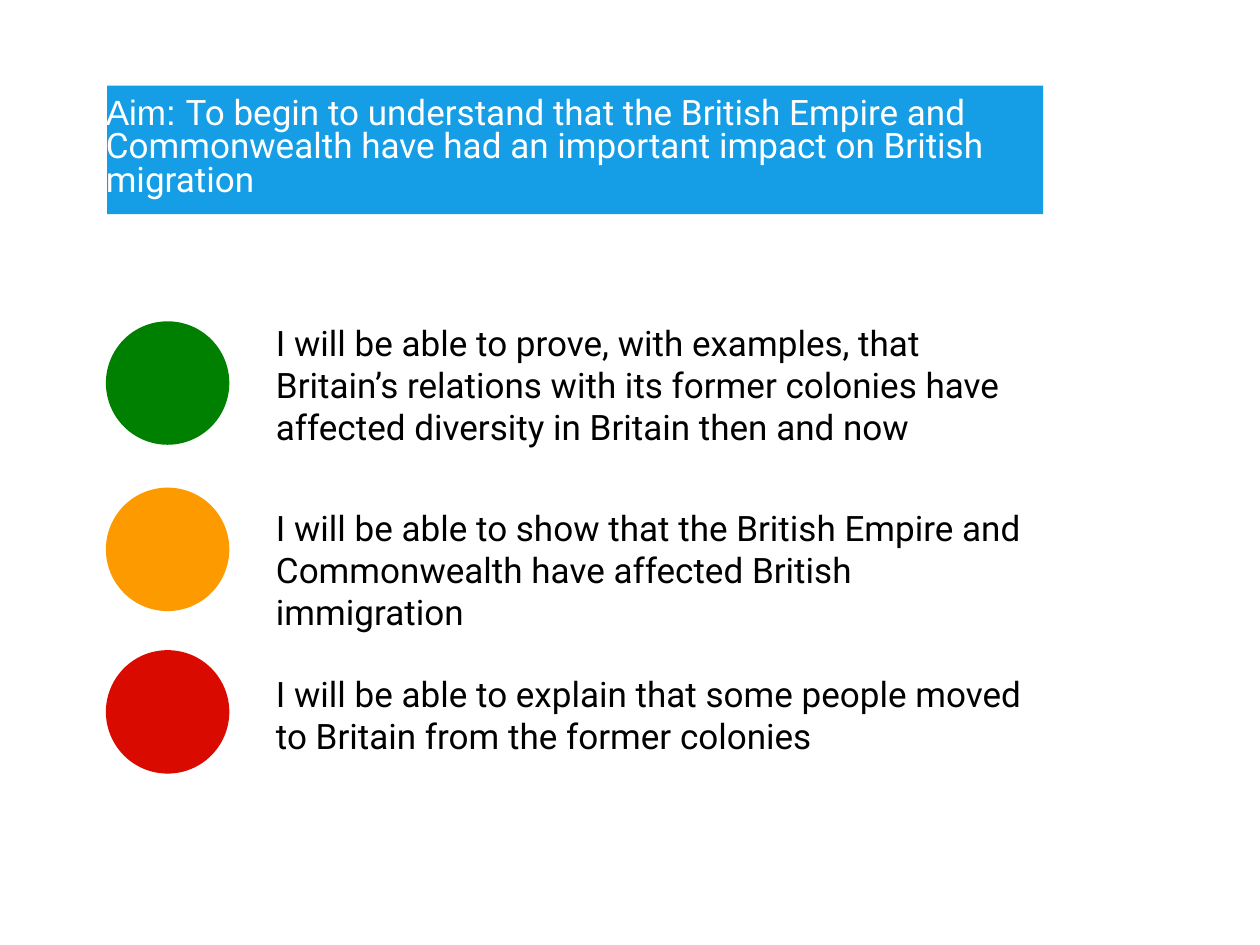
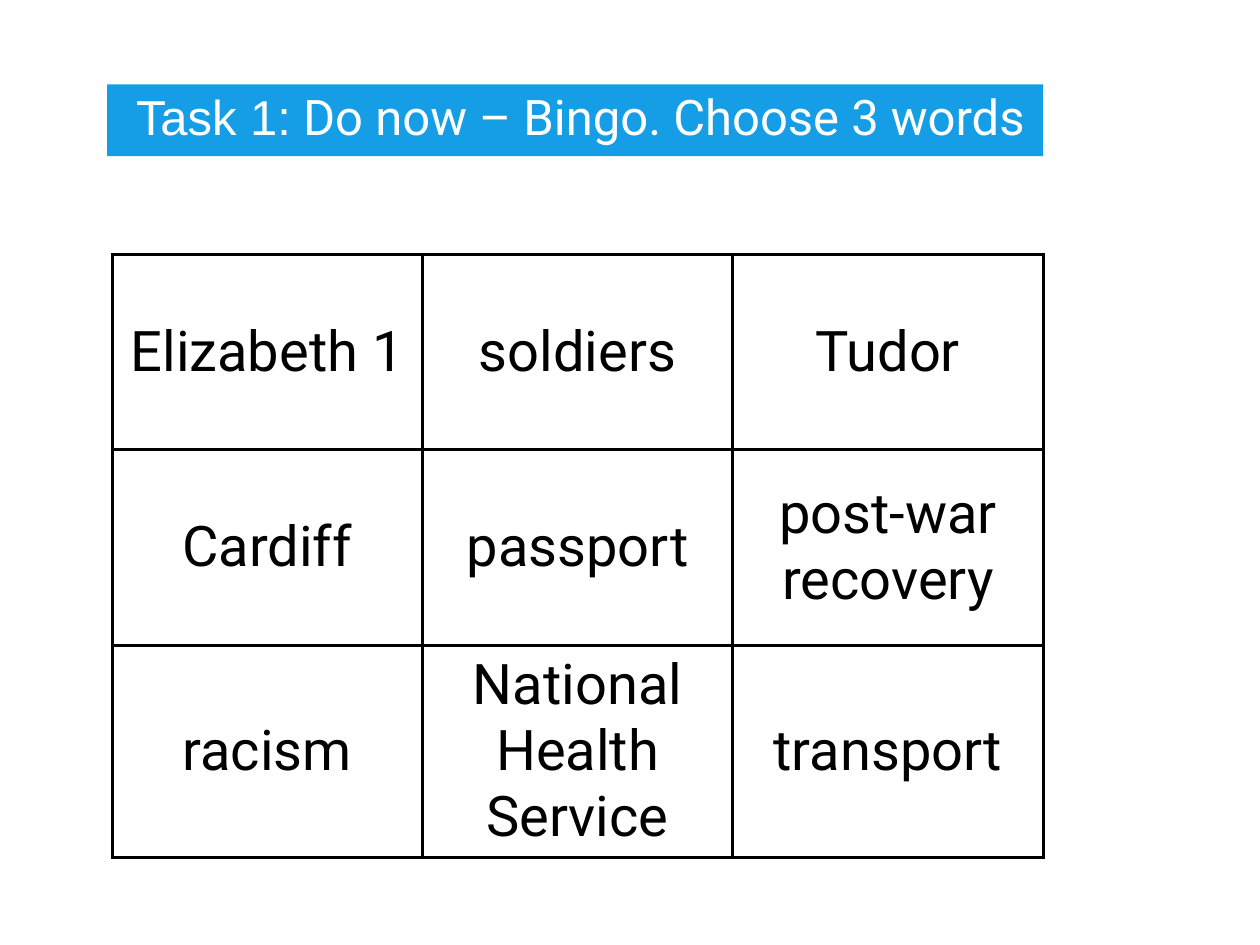
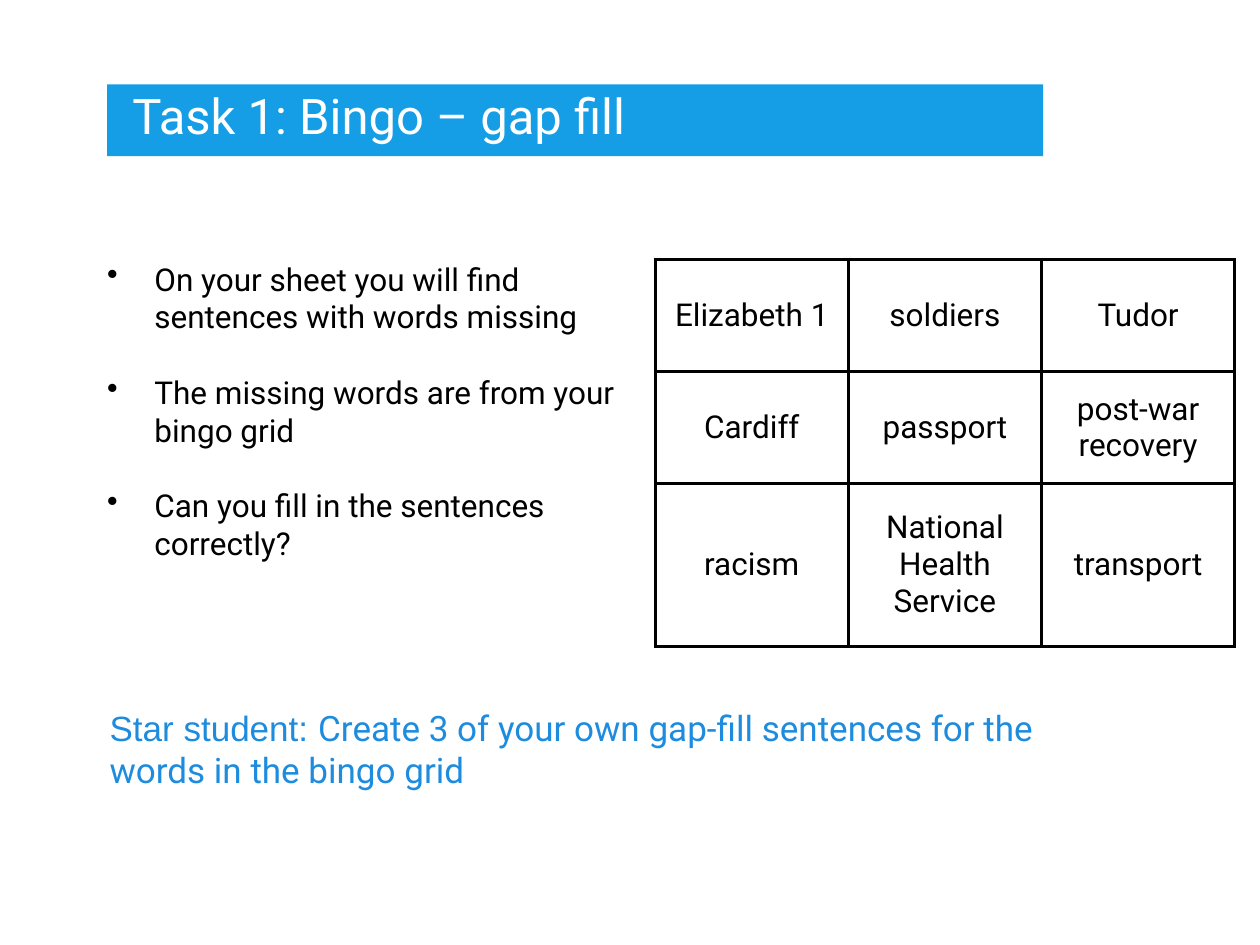
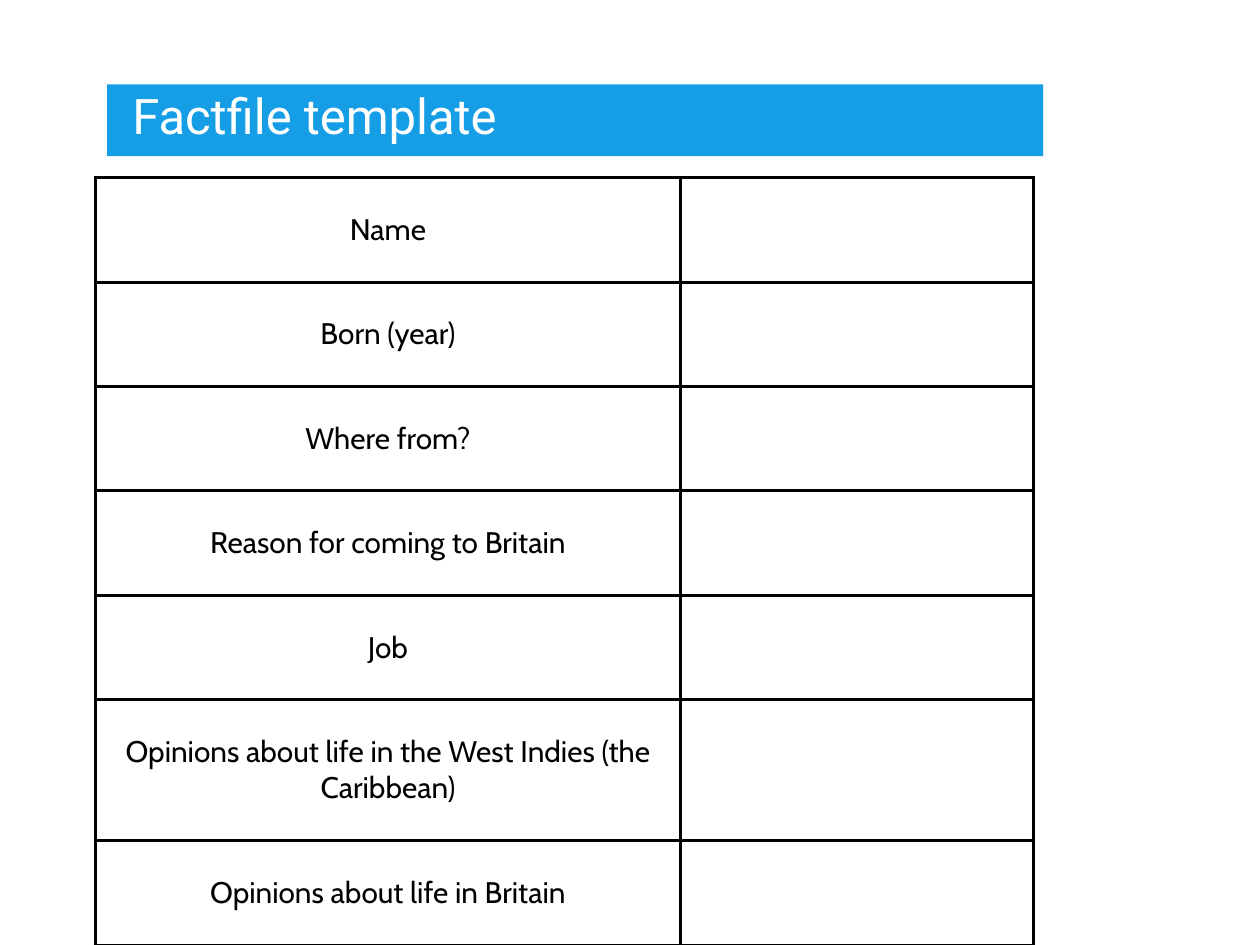
from dataclasses import dataclass
from typing import NamedTuple

from lxml.etree import SubElement
from pptx import Presentation
from pptx.dml.color import RGBColor
from pptx.enum.shapes import MSO_SHAPE as Preset
from pptx.enum.text import MSO_ANCHOR as Anchor, MSO_AUTO_SIZE as AutoSize, PP_ALIGN as Align
from pptx.oxml.ns import qn
from pptx.util import Pt


@dataclass(frozen=True)
class Theme:
    band: str = "159EE5"
    accent: str = "1E8CDE"
    ink: str = "000000"
    paper: str = "FFFFFF"
    green: str = "008000"
    amber: str = "FD9A00"
    red: str = "D90B00"
    body_font: str = "Roboto"
    label_font: str = "Arial"
    form_font: str = "Cabin"
    title_size: float = 28
    lead_size: float = 20
    bullet_size: float = 18
    bingo_size: float = 32
    form_size: float = 17
    border: float = 2
    cell_inset: float = 3


THEME = Theme()


class Box(NamedTuple):
    """Left, top, width and height in points."""
    left: float
    top: float
    width: float
    height: float

    def lengths(self) -> list:
        return [Pt(value) for value in self]


class Span(NamedTuple):
    text: str
    font: str = THEME.body_font


class Goal(NamedTuple):
    colour: str
    circle_top: float
    text_top: float
    text_height: float
    text: str


BAND = Box(61.2, 48.24, 534.96, 41.04)
AIM_BAND = BAND._replace(top=48.96, height=73.44)
TITLE = Box(75.6, 48.96, 519.84, 33.84)
CIRCLE_LEFT, CIRCLE_SIZE = 60.48, 70.56
GOAL_LEFT, GOAL_WIDTH = 157.68, 438.48

GOALS = [
    Goal(THEME.green, 183.6, 183.6, 95,
         "I will be able to prove, with examples, that Britain’s relations with "
         "its former colonies have affected diversity in Britain then and now"),
    Goal(THEME.amber, 278.64, 289.44, 61.2,
         "I will be able to show that the British Empire and Commonwealth have "
         "affected British immigration"),
    Goal(THEME.red, 371.52, 384.48, 92.16,
         "I will be able to explain that some people moved to Britain from the "
         "former colonies"),
]
BINGO = [
    ["Elizabeth 1", "soldiers", "Tudor"],
    ["Cardiff", "passport", "post-war recovery"],
    ["racism", "National Health Service", "transport"],
]
INSTRUCTIONS = [
    "On your sheet you will find sentences with words missing",
    "The missing words are from your bingo grid",
    "Can you fill in the sentences correctly?",
]
FACTS = [
    "Name",
    "Born (year)",
    "Where from?",
    "Reason for coming to Britain",
    "Job",
    "Opinions about life in the West Indies (the Caribbean)",
    "Opinions about life in Britain",
]


def add_filled(page, preset, box: Box, colour: str) -> None:
    shape = page.shapes.add_shape(preset, *box.lengths())
    shape.shadow.inherit = False
    shape.fill.solid()
    shape.fill.fore_color.rgb = RGBColor.from_string(colour)
    shape.line.fill.background()


def write(para, *spans: Span, size: float, colour: str = THEME.ink) -> None:
    for span in spans:
        run = para.add_run()
        run.text = span.text
        run.font.name = span.font
        run.font.size = Pt(size)
        run.font.color.rgb = RGBColor.from_string(colour)


def add_frame(page, box: Box, grow: bool = False):
    """Add a wrapping text box without margins and return its text frame."""
    frame = page.shapes.add_textbox(*box.lengths()).text_frame
    frame.word_wrap = True
    frame.auto_size = AutoSize.SHAPE_TO_FIT_TEXT if grow else AutoSize.NONE
    frame.margin_left = frame.margin_top = frame.margin_right = frame.margin_bottom = 0
    return frame


def add_title(page, *spans: Span, box: Box = TITLE, band: Box = BAND,
              size: float = THEME.title_size, spacing: float | None = None) -> None:
    add_filled(page, Preset.RECTANGLE, band, THEME.band)
    para = add_frame(page, box, grow=True).paragraphs[0]
    para.line_spacing = spacing
    write(para, *spans, size=size, colour=THEME.paper)


def add_bullets(page, box: Box, items: list[str], indent: float, gap: float) -> None:
    frame = add_frame(page, box)
    for index, item in enumerate(items):
        para = frame.add_paragraph() if index else frame.paragraphs[0]
        para.space_before = Pt(gap if index else 0)
        write(para, Span(item), size=THEME.bullet_size)
        props = para._p.get_or_add_pPr()
        props.set("marL", str(Pt(indent)))
        props.set("indent", str(-Pt(indent)))
        SubElement(props, qn("a:buChar"), char="•")


def draw_borders(cell) -> None:
    props = cell._tc.get_or_add_tcPr()
    for side in ("lnL", "lnR", "lnT", "lnB"):
        line = SubElement(props, qn(f"a:{side}"), w=str(Pt(THEME.border)))
        fill = SubElement(line, qn("a:solidFill"))
        SubElement(fill, qn("a:srgbClr"), val=THEME.ink)


def add_grid(page, left: float, top: float, rows: list[list[str]], widths: list[float],
             heights: list[float], size: float, font: str = THEME.body_font) -> None:
    """Add a ruled table with centred text and no cell fills."""
    box = Box(left, top, sum(widths), sum(heights))
    table = page.shapes.add_table(len(rows), len(widths), *box.lengths()).table
    table.first_row = table.horz_banding = False
    for column, width in zip(table.columns, widths):
        column.width = Pt(width)
    for row, height, texts in zip(table.rows, heights, rows):
        row.height = Pt(height)
        for cell, text in zip(row.cells, texts):
            draw_borders(cell)
            cell.fill.background()
            cell.vertical_anchor = Anchor.MIDDLE
            cell.margin_left = cell.margin_right = Pt(THEME.cell_inset)
            cell.margin_top = cell.margin_bottom = Pt(THEME.cell_inset)
            para = cell.text_frame.paragraphs[0]
            para.alignment = Align.CENTER
            if text:
                write(para, Span(text, font), size=size)


def build_aim(page) -> None:
    for goal in GOALS:
        circle = Box(CIRCLE_LEFT, goal.circle_top, CIRCLE_SIZE, CIRCLE_SIZE)
        add_filled(page, Preset.OVAL, circle, goal.colour)
    for goal in GOALS:
        frame = add_frame(page, Box(GOAL_LEFT, goal.text_top, GOAL_WIDTH, goal.text_height))
        write(frame.paragraphs[0], Span(goal.text), size=THEME.lead_size)
    add_title(page, Span("Aim: ", THEME.label_font),
              Span("To begin to understand that the British Empire and Commonwealth "
                   "have had an important impact on British migration"),
              box=Box(60.48, 56.16, 534.96, 59), band=AIM_BAND,
              size=THEME.lead_size, spacing=0.8)


def build_bingo(page) -> None:
    add_title(page, Span("Task 1:", THEME.label_font),
              Span(" Do now – Bingo. Choose 3 words"),
              box=Box(77.76, 56.16, 518.4, 28), spacing=0.8)
    add_grid(page, 64.08, 145.44, BINGO, [177.36] * 3, [111.6, 111.6, 114.5],
             THEME.bingo_size)


def build_gap_fill(page) -> None:
    add_title(page, Span("Task 1: Bingo – gap fill"))
    add_bullets(page, Box(61.2, 148.32, 298.8, 274.32), INSTRUCTIONS, indent=27, gap=21.5)
    add_grid(page, 374.4, 148.32, BINGO, [110.4] * 3, [64.1, 64.1, 92.9],
             THEME.bullet_size)
    frame = add_frame(page, Box(62.64, 403.92, 532.8, 114.48))
    write(frame.paragraphs[0], Span("Star student: ", THEME.label_font),
          Span("Create 3 of your own gap-fill sentences for the words in the bingo grid"),
          size=THEME.lead_size, colour=THEME.accent)


def build_factfile(page) -> None:
    add_title(page, Span("Factfile template"))
    heights = [59.65] * len(FACTS)
    heights[-2] = 80.64
    add_grid(page, 54.3, 101.6, [[fact, ""] for fact in FACTS], [334.8, 201.6], heights,
             THEME.form_size, THEME.form_font)


def main() -> None:
    deck = Presentation()
    deck.slide_width, deck.slide_height = Pt(720), Pt(540)
    blank = deck.slide_layouts[6]
    for build in (build_aim, build_bingo, build_gap_fill, build_factfile):
        build(deck.slides.add_slide(blank))
    deck.save("out.pptx")


if __name__ == "__main__":
    main()
